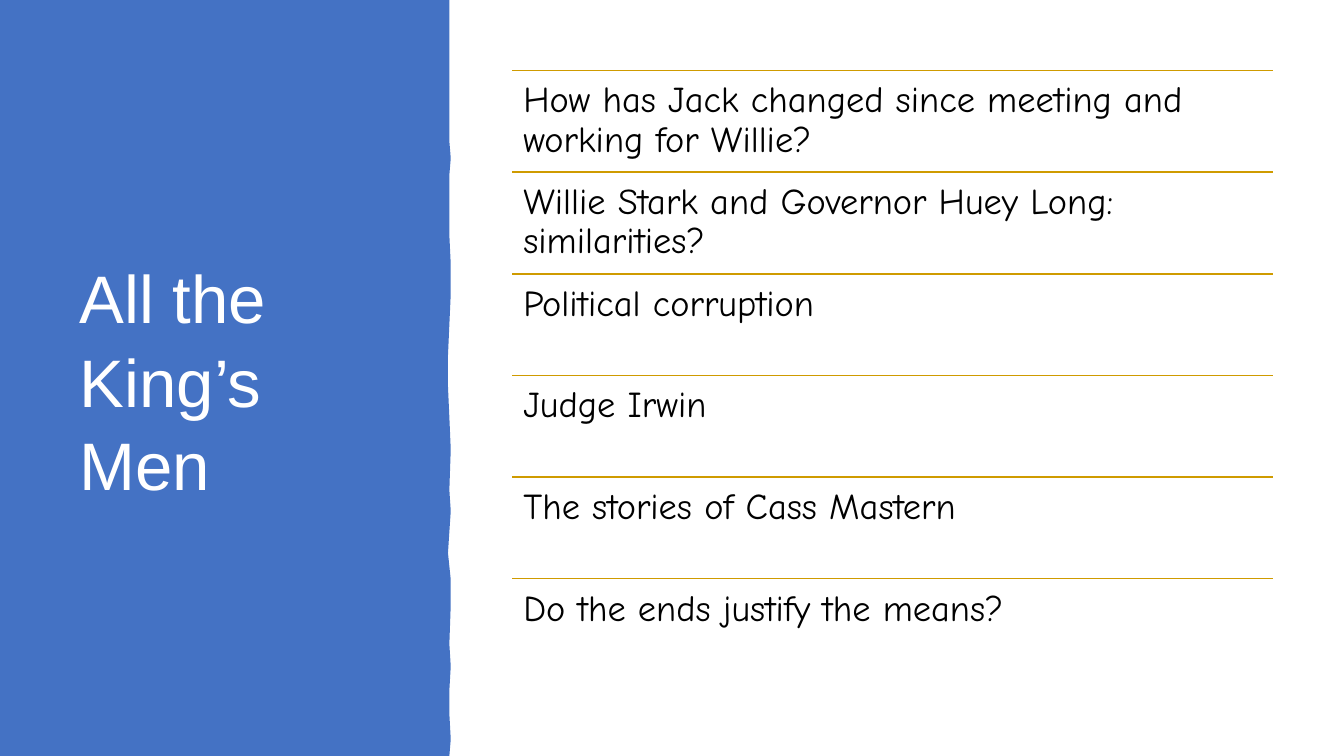
from lxml import etree
from pptx import Presentation
from pptx import util as u
from pptx.dml.color import RGBColor
from pptx.enum import shapes, text
from pptx.oxml import ns

TITLE = "All the King’s Men"
TOPICS = [
    "How has Jack changed since meeting and working for Willie?",
    "Willie Stark and Governor Huey Long: similarities?",
    "Political corruption",
    "Judge Irwin",
    "The stories of Cass Mastern",
    "Do the ends justify the means?",
]

BLUE = RGBColor(0x44, 0x72, 0xC4)
GOLD = RGBColor(0xCF, 0x9B, 0x00)
WHITE = RGBColor(0xFF, 0xFF, 0xFF)
BLACK = RGBColor(0x00, 0x00, 0x00)

# Lengths in points
WIDTH, HEIGHT = 960, 540
TITLE_BOX = (49.7, 50.4, 244, 440)
LIST_LEFT, LIST_TOP, LIST_WIDTH, ROW_HEIGHT = 366, 50.4, 543.5, 72.6
INSET = 7.8
# Ragged right edge of the panel, from top to bottom
EDGE = [
    (321.2, 0), (320.8, 25), (321.2, 45), (321.1, 73), (320.7, 87),
    (321.2, 101), (321.7, 113), (321.2, 125), (320.8, 147), (321.3, 168),
    (321.9, 189), (321.6, 210), (320.6, 232), (320, 254), (320.4, 276),
    (321.4, 298), (321.9, 321), (321.2, 350), (321.5, 365), (320.6, 380),
    (320.5, 395), (321.5, 414), (321.9, 432), (321.2, 460), (321.6, 476),
    (321.2, 493), (321.3, 510), (321.8, 528), (321.2, HEIGHT),
]

presentation = Presentation()
presentation.slide_width, presentation.slide_height = u.Pt(WIDTH), u.Pt(HEIGHT)
slide = presentation.slides.add_slide(presentation.slide_layouts[5])

# Title
title = slide.shapes.title
title.left, title.top, title.width, title.height = map(u.Pt, TITLE_BOX)
frame = title.text_frame
frame.text = TITLE
frame.word_wrap = True
frame.auto_size = text.MSO_AUTO_SIZE.NONE
frame.vertical_anchor = text.MSO_ANCHOR.MIDDLE
paragraph = frame.paragraphs[0]
paragraph.alignment = text.PP_ALIGN.LEFT
paragraph.line_spacing = 1.04
paragraph.font.name, paragraph.font.size = "Arial", u.Pt(48)
paragraph.font.color.rgb = WHITE

# Blue panel, placed behind the title
builder = slide.shapes.build_freeform(0, 0, scale=u.Pt(1))
builder.add_line_segments(EDGE + [(0, HEIGHT)], close=True)
panel = builder.convert_to_shape()
panel.shadow.inherit = False
panel.fill.solid()
panel.fill.fore_color.rgb = BLUE
panel.line.fill.background()
title.element.addprevious(panel.element)

# Topics, each under a gold rule
for row, topic in enumerate(TOPICS):
    left, top = u.Pt(LIST_LEFT), u.Pt(LIST_TOP + row * ROW_HEIGHT)
    rule = slide.shapes.add_connector(
        shapes.MSO_CONNECTOR.STRAIGHT, left, top, left + u.Pt(LIST_WIDTH), top)
    rule.line.color.rgb = GOLD
    rule.line.width = u.Pt(1)
    etree.SubElement(rule.element.spPr, ns.qn("a:effectLst"))

    box = slide.shapes.add_textbox(left, top, u.Pt(LIST_WIDTH), u.Pt(ROW_HEIGHT))
    frame = box.text_frame
    frame.text = topic
    frame.word_wrap = True
    frame.vertical_anchor = text.MSO_ANCHOR.TOP
    frame.margin_left = frame.margin_right = u.Pt(INSET)
    frame.margin_top = frame.margin_bottom = u.Pt(INSET)
    paragraph = frame.paragraphs[0]
    paragraph.line_spacing = 0.9
    paragraph.font.name, paragraph.font.size = "Comic Neue", u.Pt(26)
    paragraph.font.color.rgb = BLACK

presentation.save("out.pptx")
